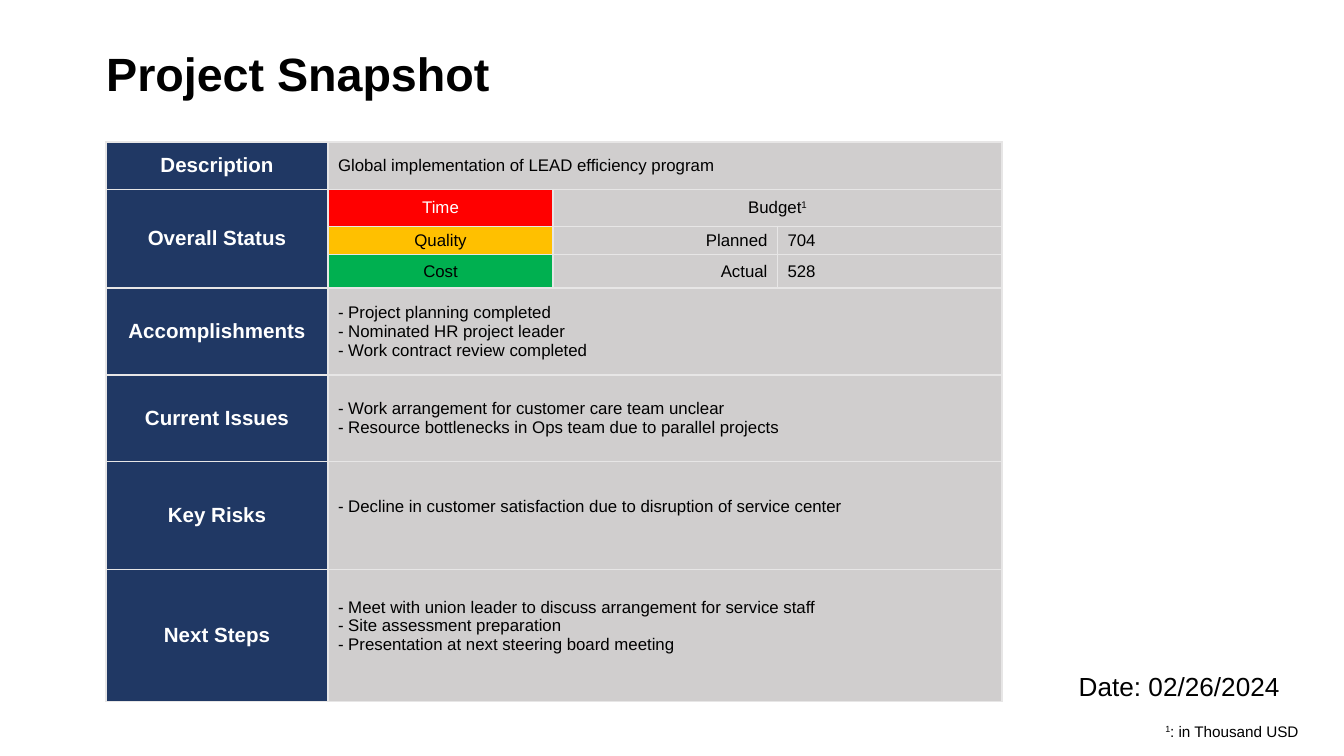
from lxml.etree import SubElement as Sub
from pptx import Presentation
from pptx.dml.color import RGBColor as RGB
from pptx.enum.text import MSO_ANCHOR as Anchor, PP_ALIGN as Align
from pptx.oxml.ns import qn
from pptx.util import Pt

PX = 4572  # 200 px to the inch
FONT = "Arial"
COLORS = {
    "black": "000000", "white": "FFFFFF", "navy": "203864", "gray": "D0CECE",
    "edge": "E7E6E6", "red": "FF0000", "amber": "FFC000", "green": "00B050",
}
COLS = [330, 335, 334, 334]
ROWS = [71, 55, 42, 50, 129, 129, 161, 196]
SIDE, EDGE = 15, 7  # cell margins
SPARE = 28  # one line of room left under the last lists

# row, label, rows spanned
LABELS = [
    (0, "Description", 1), (1, "Overall Status", 3), (4, "Accomplishments", 1),
    (5, "Current Issues", 1), (6, "Key Risks", 1), (7, "Next Steps", 1),
]
# row, lines, spare room
NOTES = [
    (0, ["Global implementation of LEAD efficiency program"], 0),
    (4, ["- Project planning completed",
         "- Nominated HR project leader",
         "- Work contract review completed"], 0),
    (5, ["- Work arrangement for customer care team unclear",
         "- Resource bottlenecks in Ops team due to parallel projects"], 0),
    (6, ["- Decline in customer satisfaction due to disruption of service center"], SPARE),
    (7, ["- Meet with union leader to discuss arrangement for service staff",
         "- Site assessment preparation\n- Presentation at next steering board meeting"], SPARE),
]
LIGHTS = [("Time", "red", "white"), ("Quality", "amber", "black"), ("Cost", "green", "black")]
BUDGET = [("Planned", "704"), ("Actual", "528")]


def color(name):
    return RGB.from_string(COLORS[name])


def scale(box):
    return [n * PX for n in box]


def add_run(para, text, size, tint="black", bold=False, sup=False):
    """Add a run, with a line break before each further line of its text."""
    for i, part in enumerate(text.split("\n")):
        if i:
            para.add_line_break()
        run = para.add_run()
        run.text = part
        font = run.font
        font.name, font.size, font.bold = FONT, Pt(size), bold
        font.color.rgb = color(tint)
        if sup:
            run._r.get_or_add_rPr().set("baseline", "30000")


def write(frame, lines, size, align=Align.LEFT, tint="black", bold=False):
    """Write lines, each a list of (text, is superscript) runs or a string."""
    for i, line in enumerate(lines):
        para = frame.add_paragraph() if i else frame.paragraphs[0]
        para.alignment = align
        for text, sup in [(line, False)] if isinstance(line, str) else line:
            add_run(para, text, size, tint, bold, sup)


def style(cell, fill):
    """Set the borders, fill, margins and anchor of a cell."""
    props = cell._tc.get_or_add_tcPr()
    for side in ("lnL", "lnR", "lnT", "lnB"):
        line = Sub(props, qn("a:" + side), w=str(Pt(1)))
        solid = Sub(line, qn("a:solidFill"))
        Sub(solid, qn("a:srgbClr"), val=COLORS["edge"])
    cell.fill.solid()
    cell.fill.fore_color.rgb = color(fill)
    cell.margin_left = cell.margin_right = SIDE * PX
    cell.margin_top = cell.margin_bottom = EDGE * PX
    cell.vertical_anchor = Anchor.MIDDLE


def add_title(slide, box):
    title = slide.shapes.title
    title.left, title.top, title.width, title.height = scale(box)
    frame = title.text_frame
    frame.vertical_anchor = Anchor.MIDDLE
    write(frame, ["Project Snapshot"], 25, bold=True)
    frame.paragraphs[0].line_spacing = 0.9


def add_grid(slide, box):
    table = slide.shapes.add_table(len(ROWS), len(COLS), *scale(box)).table
    table.first_row = table.horz_banding = False
    for col, wide in zip(table.columns, COLS):
        col.width = wide * PX
    for row, high in zip(table.rows, ROWS):
        row.height = high * PX
        for c, cell in enumerate(row.cells):
            style(cell, "gray" if c else "navy")
    cell = table.cell

    for r, text, span in LABELS:
        if span > 1:
            cell(r, 0).merge(cell(r + span - 1, 0))
        write(cell(r, 0).text_frame, [text], 11, Align.CENTER, "white", True)
    for r, lines, spare in NOTES:
        cell(r, 1).merge(cell(r, 3))
        cell(r, 1).margin_bottom = (EDGE + spare) * PX
        write(cell(r, 1).text_frame, lines, 9)
    for r, (text, fill, tint) in enumerate(LIGHTS, 1):
        cell(r, 1).fill.fore_color.rgb = color(fill)
        write(cell(r, 1).text_frame, [text], 9, Align.CENTER, tint)

    cell(1, 2).merge(cell(1, 3))
    write(cell(1, 2).text_frame, [[("Budget", False), ("1", True)]], 9, Align.CENTER)
    for r, (name, cost) in enumerate(BUDGET, 2):
        write(cell(r, 2).text_frame, [name], 9, Align.RIGHT)
        write(cell(r, 3).text_frame, [cost], 9)


def add_note(slide, box, line, size):
    frame = slide.shapes.add_textbox(*scale(box)).text_frame
    frame.word_wrap = True
    write(frame, [line], size, Align.RIGHT)


def main():
    deck = Presentation()
    deck.slide_width, deck.slide_height = scale((2000, 1125))
    slide = deck.slides.add_slide(deck.slide_layouts[5])
    add_title(slide, (138, 60, 1724, 106))
    add_grid(slide, (158, 211, sum(COLS), sum(ROWS)))
    add_note(slide, (1562, 1065, 390, 48), [("1", True), (": in Thousand USD", False)], 8.2)
    add_note(slide, (1514, 988, 410, 68), "Date: 02/26/2024", 14)
    deck.save("out.pptx")


if __name__ == "__main__":
    main()
